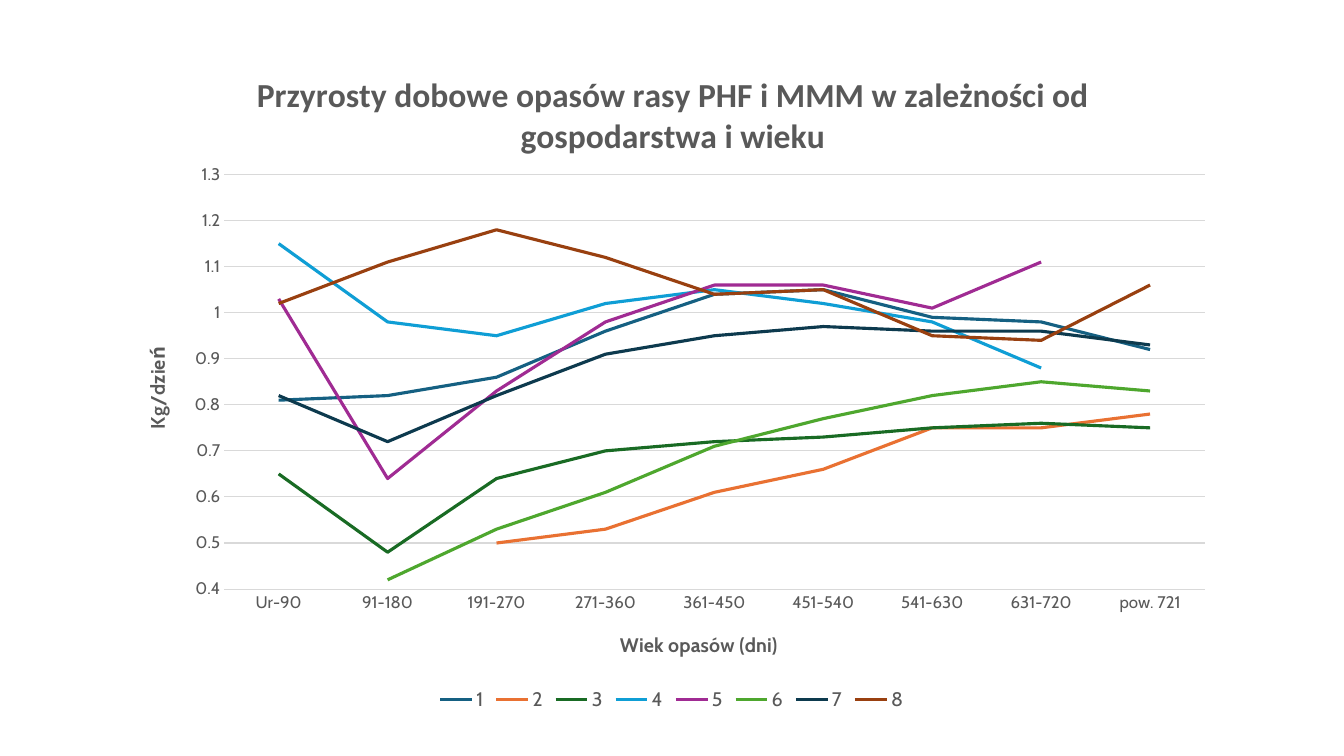
from pptx import Presentation
from pptx.chart.data import CategoryChartData as Data
from pptx.dml.color import RGBColor as RGB
from pptx.enum.chart import XL_CHART_TYPE as Kind
from pptx.enum.chart import XL_LEGEND_POSITION as Side
from pptx.enum.chart import XL_TICK_MARK as Tick
from pptx.oxml import parse_xml
from pptx.oxml.ns import nsdecls, qn
from pptx.util import Pt

GREY = RGB(0x59, 0x59, 0x59)
PALE = RGB(0xD9, 0xD9, 0xD9)
BLUE = RGB(0x15, 0x60, 0x82)
ORANGE = RGB(0xE9, 0x71, 0x32)
GREEN = RGB(0x19, 0x6B, 0x24)
SKY = RGB(0x0F, 0x9E, 0xD5)
PURPLE = RGB(0xA0, 0x2B, 0x93)
LIME = RGB(0x4E, 0xA7, 0x2E)
NAVY = RGB(0x0D, 0x3A, 0x4E)
BROWN = RGB(0x99, 0x40, 0x10)

AGES = ["Ur-90", "91-180", "191-270", "271-360", "361-450",
        "451-540", "541-630", "631-720", "pow. 721"]
FARMS = [
    (BLUE, [0.81, 0.82, 0.86, 0.96, 1.04, 1.05, 0.99, 0.98, 0.92]),
    (ORANGE, [None, None, 0.5, 0.53, 0.61, 0.66, 0.75, 0.75, 0.78]),
    (GREEN, [0.65, 0.48, 0.64, 0.7, 0.72, 0.73, 0.75, 0.76, 0.75]),
    (SKY, [1.15, 0.98, 0.95, 1.02, 1.05, 1.02, 0.98, 0.88, None]),
    (PURPLE, [1.03, 0.64, 0.83, 0.98, 1.06, 1.06, 1.01, 1.11, None]),
    (LIME, [None, 0.42, 0.53, 0.61, 0.71, 0.77, 0.82, 0.85, 0.83]),
    (NAVY, [0.82, 0.72, 0.82, 0.91, 0.95, 0.97, 0.96, 0.96, 0.93]),
    (BROWN, [1.02, 1.11, 1.18, 1.12, 1.04, 1.05, 0.95, 0.94, 1.06]),
]


def place(node, inner=False, **marks):
    old = node.find(qn("c:layout"))
    spot = 0 if old is None else node.index(old)
    if old is not None:
        node.remove(old)
    modes = "".join(f'<c:{key}Mode val="edge"/>' for key in "xy")
    sizes = "".join(f'<c:{key} val="{val}"/>' for key, val in marks.items())
    target = '<c:layoutTarget val="inner"/>' if inner else ""
    node.insert(spot, parse_xml(
        f'<c:layout {nsdecls("c")}><c:manualLayout>{target}{modes}{sizes}'
        '</c:manualLayout></c:layout>'))


def label(text, title, size, x, y, name="Cabin", turn=0):
    frame = title.text_frame
    frame.text = text
    frame._txBody.bodyPr.set("rot", str(turn * 60000))
    font = frame.paragraphs[0].runs[0].font
    font.name, font.size, font.bold = name, Pt(size), True
    font.color.rgb = GREY
    place(title._element, x=x, y=y)


deck = Presentation()
deck.slide_width, deck.slide_height = Pt(960), Pt(540)
slide = deck.slides.add_slide(deck.slide_layouts[6])

data = Data()
data.categories = AGES
for num, (hue, gains) in enumerate(FARMS, 1):
    data.add_series(str(num), gains)
chart = slide.shapes.add_chart(
    Kind.LINE, Pt(84.2), Pt(28.1), Pt(791.3), Pt(483.1), data).chart
chart.font.name, chart.font.size = "Cabin", Pt(10)

ages, gain = chart.category_axis, chart.value_axis
for axis in (ages, gain):
    axis.major_tick_mark = axis.minor_tick_mark = Tick.NONE
    font = axis.tick_labels.font
    font.name, font.size, font.color.rgb = "Cabin", Pt(12), GREY
gain.minimum_scale, gain.maximum_scale, gain.major_unit = 0.4, 1.3, 0.1
gain.tick_labels.number_format = "General"
gain.tick_labels.number_format_is_linked = False
gain.format.line.fill.background()
for line in (ages.format.line, gain.major_gridlines.format.line):
    line.color.rgb, line.width = PALE, Pt(0.75)

label("Przyrosty dobowe opasów rasy PHF i MMM w zależności od "
      "gospodarstwa i wieku", chart.chart_title, 24, 0.12, 0.04, name="Calibri")
label("Wiek opasów (dni)", ages.axis_title, 14, 0.45, 0.87)
label("Kg/dzień", gain.axis_title, 14, 0.02, 0.45, turn=-90)

plot = chart.plots[0]
plot.vary_by_categories = False
place(plot._element.getparent(), inner=True, x=0.096, y=0.2, w=0.885, h=0.613)
for row, (hue, gains) in zip(plot.series, FARMS):
    row.smooth = False
    row.format.line.color.rgb = hue
    row.format.line.width = Pt(2.25)

chart.has_legend = True
key = chart.legend
key.position = Side.BOTTOM
key.include_in_layout = False
key.font.name, key.font.size, key.font.color.rgb = "Cabin", Pt(14), GREY

deck.save("out.pptx")
